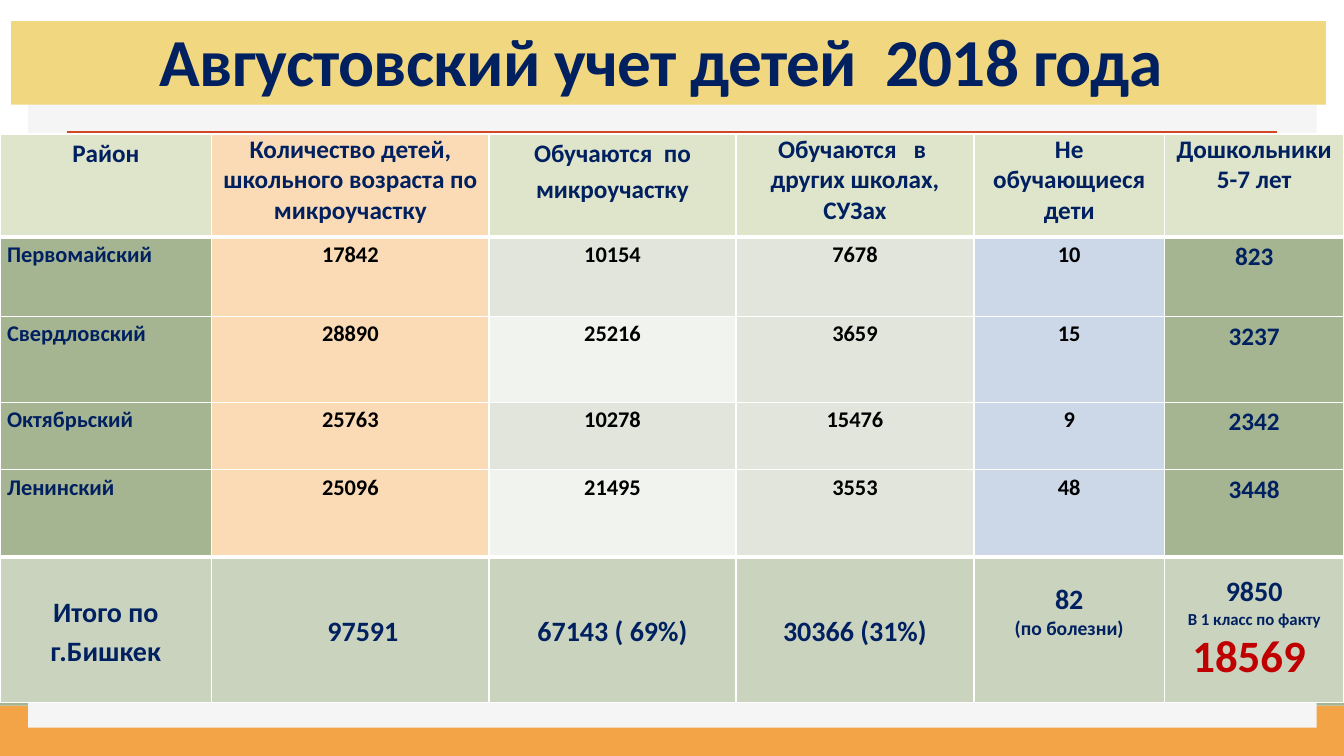
from lxml import etree
from pptx import Presentation
from pptx.dml.color import RGBColor
from pptx.enum.shapes import MSO_CONNECTOR, MSO_SHAPE
from pptx.enum.text import MSO_ANCHOR, PP_ALIGN
from pptx.oxml.ns import qn
from pptx.util import Inches, Pt

RECT = MSO_SHAPE.RECTANGLE
STRAIGHT = MSO_CONNECTOR.STRAIGHT
TOP, MIDDLE, BOTTOM = MSO_ANCHOR.TOP, MSO_ANCHOR.MIDDLE, MSO_ANCHOR.BOTTOM
CENTER, JUSTIFY = PP_ALIGN.CENTER, PP_ALIGN.JUSTIFY

FONT = "Calibri"
COLORS = {
    "navy": "002060", "black": "000000", "red": "C00000", "white": "FFFFFF",
    "orange": "F3A447", "green": "A5B592", "panel": "F5F5F5", "rule": "D24726",
    "banner": "F1D77F", "header": "DFE5CA", "peach": "FADBB5",
    "sage": "E1E5DC", "pale": "F0F3EE", "blue": "CCD8E7", "total": "C9D3BE",
}

COL_WIDTHS = [2.1, 2.75, 2.45, 2.36, 1.89, 1.78]
ROW_HEIGHTS = [1.02, 0.79, 0.85, 0.67, 0.87, 1.44]
CELL_INSET = 0.07
LOOSE, TIGHT = (1.15, 10), (1, 0)  # line spacing, points after

# Header cells: lines and their spacing
HEADERS = [
    (["Район"], LOOSE),
    (["Количество детей, школьного возраста по микроучастку"], (1, 10)),
    (["Обучаются  по микроучастку"], LOOSE),
    (["Обучаются   в  других школах, СУЗах"], (1, 10)),
    (["Не обучающиеся дети"], TIGHT),
    (["Дошкольники", "5-7 лет"], TIGHT),
]
DISTRICTS = [
    ("Первомайский", "17842", "10154", "7678", "10", "823"),
    ("Свердловский", "28890", "25216", "3659", "15", "3237"),
    ("Октябрьский", "25763", "10278", "15476", "9", "2342"),
    ("Ленинский", "25096", "21495", "3553", "48", "3448"),
]
# Total cells: paragraphs of (text, size, color) runs, and their spacing
TOTALS = [
    ([[("Итого по г.Бишкек", 20, "navy")]], LOOSE),
    ([[("97591", 20, "navy")]], LOOSE),
    ([[("67143 ( 69%)", 20, "navy")]], LOOSE),
    ([[("30366 (31%)", 20, "navy")]], LOOSE),
    ([[("82", 20, "navy")], [("(по болезни)", 14, "navy")]], TIGHT),
    ([[("9850", 20, "navy")],
      [("В 1 класс по факту ", 12, "navy"), ("18569 ", 32, "red")]], TIGHT),
]


def rgb(name):
    return RGBColor.from_string(COLORS[name])


def add_rect(slide, box, color):
    rect = slide.shapes.add_shape(RECT, *map(Inches, box))
    rect.shadow.inherit = False
    rect.fill.solid()
    rect.fill.fore_color.rgb = rgb(color)
    rect.line.fill.background()
    return rect


def add_run(paragraph, text, size, color):
    run = paragraph.add_run()
    run.text = text
    run.font.name = FONT
    run.font.size = Pt(size)
    run.font.bold = True
    run.font.color.rgb = rgb(color)
    return run


def add_background(slide, box):
    left, top, width, height = box
    bottom = top + height
    add_rect(slide, (left, bottom - 0.5, width, 0.5), "orange")
    add_rect(slide, (left, bottom - 0.57, width, 0.07), "green")
    add_rect(slide, (left + 0.28, top + 0.29, width - 0.55, 6.93), "panel")
    rule_y = Inches(top + 1.31)
    rule = slide.shapes.add_connector(
        STRAIGHT, Inches(left + 0.66), rule_y, Inches(left + width - 0.66), rule_y)
    rule.line.color.rgb = rgb("rule")
    rule.line.width = Pt(2)
    etree.SubElement(rule._element.spPr, qn("a:effectLst"))


def add_title(slide, box):
    frame = add_rect(slide, box, "banner").text_frame
    frame.word_wrap = True
    frame.vertical_anchor = BOTTOM
    heading = frame.paragraphs[0]
    heading.alignment = CENTER
    heading.line_spacing = 0.85
    run = add_run(heading, "Августовский учет детей  2018 года ", 48, "navy")
    run._r.get_or_add_rPr().set("spc", "-50")


def set_borders(cell, top, bottom):
    properties = cell._tc.get_or_add_tcPr()
    for side, width in (("L", 1), ("R", 1), ("T", top), ("B", bottom)):
        line = etree.SubElement(properties, qn(f"a:ln{side}"), w=str(Pt(width)))
        fill = etree.SubElement(line, qn("a:solidFill"))
        etree.SubElement(fill, qn("a:srgbClr"), val=COLORS["white"])


def fill_cell(cell, paragraphs, color, spacing=LOOSE, align=CENTER, anchor=TOP):
    cell.margin_left = cell.margin_right = Inches(CELL_INSET)
    cell.margin_top = cell.margin_bottom = 0
    cell.vertical_anchor = anchor
    cell.fill.solid()
    cell.fill.fore_color.rgb = rgb(color)
    frame = cell.text_frame
    for index, runs in enumerate(paragraphs):
        paragraph = frame.add_paragraph() if index else frame.paragraphs[0]
        paragraph.alignment = align
        paragraph.line_spacing, after = spacing
        paragraph.space_after = Pt(after)
        for text, size, text_color in runs:
            add_run(paragraph, text, size, text_color)


def add_census_table(slide, box):
    last = len(ROW_HEIGHTS) - 1
    table = slide.shapes.add_table(
        len(ROW_HEIGHTS), len(COL_WIDTHS), *map(Inches, box)).table
    table.first_row = table.horz_banding = False
    for column, width in zip(table.columns, COL_WIDTHS):
        column.width = Inches(width)
    for row, height in zip(table.rows, ROW_HEIGHTS):
        row.height = Inches(height)

    # Heavy rules under the header and above the totals
    for r, row in enumerate(table.rows):
        for cell in row.cells:
            set_borders(cell, 3 if r in (1, last) else 1,
                        3 if r in (0, last - 1) else 1)

    # Header row
    for c, (lines, spacing) in enumerate(HEADERS):
        fill_cell(table.cell(0, c), [[(line, 18, "navy")] for line in lines],
                  "peach" if c == 1 else "header", spacing)

    # District rows
    for r, district in enumerate(DISTRICTS, start=1):
        fills = ["green", "peach", "sage" if r % 2 else "pale", "sage", "blue", "green"]
        for c, (text, fill) in enumerate(zip(district, fills)):
            size = 18 if c == 5 else 16
            color = "navy" if c in (0, 5) else "black"
            fill_cell(table.cell(r, c), [[(text, size, color)]], fill,
                      align=CENTER if c else JUSTIFY)

    # Total row
    for c, (paragraphs, spacing) in enumerate(TOTALS):
        fill_cell(table.cell(last, c), paragraphs, "total", spacing, anchor=MIDDLE)
    table.cell(last, 1).margin_left = Inches(0.32)
    table.cell(last, 4).margin_bottom = Inches(0.36)


def main():
    deck = Presentation()
    deck.slide_width, deck.slide_height = Inches(13.33), Inches(7.5)
    slide = deck.slides.add_slide(deck.slide_layouts[6])
    add_background(slide, (0, 0, 13.33, 7.5))
    add_title(slide, (0.11, 0.21, 13.04, 0.83))
    add_census_table(slide, (0, 1.33, 13.33, 5.64))
    deck.save("out.pptx")


if __name__ == "__main__":
    main()
